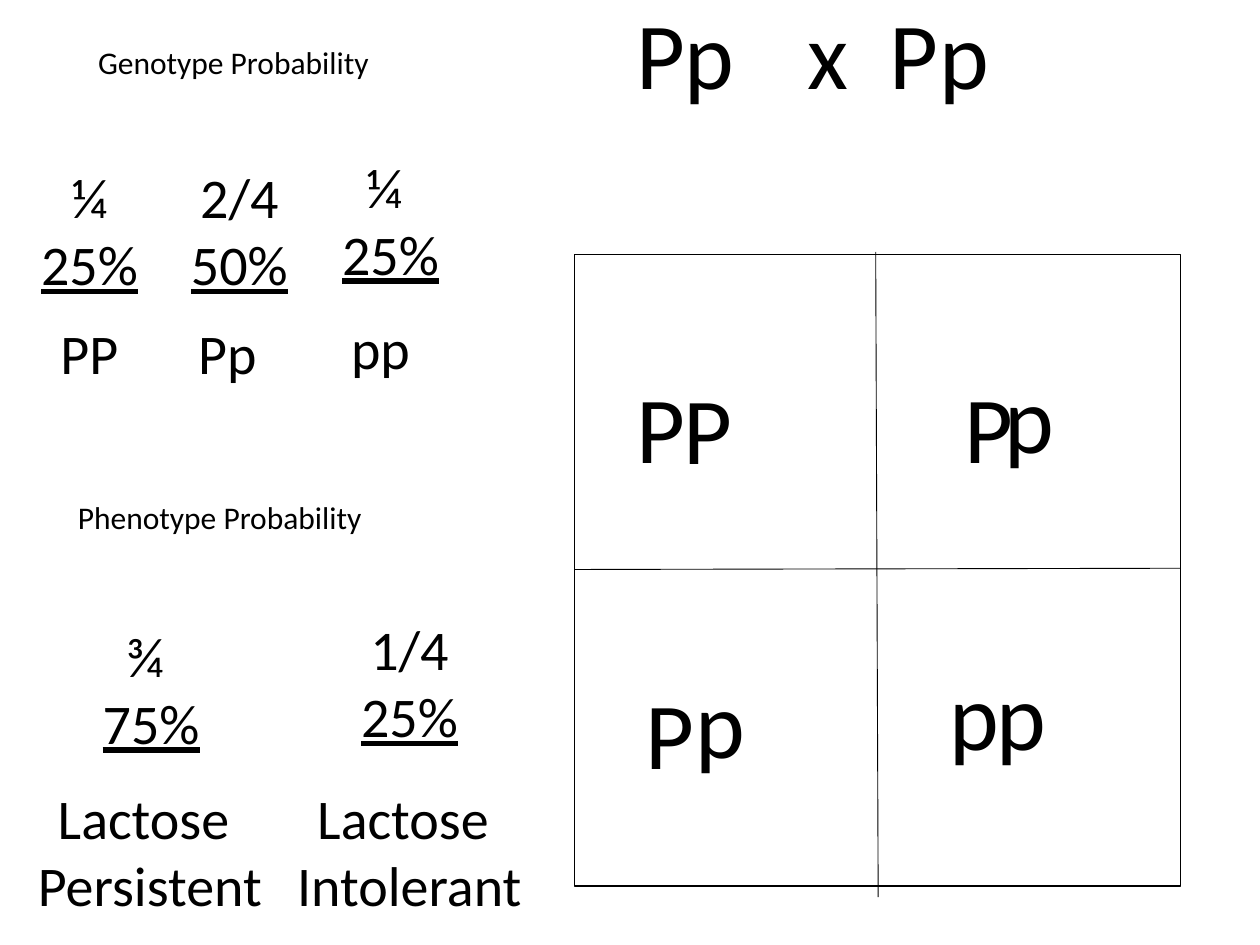
import pptx
import pptx.util
import pptx.dml.color
import pptx.enum.shapes
import pptx.enum.text
import pptx.oxml

Inches = pptx.util.Inches
BLACK = pptx.dml.color.RGBColor(0, 0, 0)
WHITE = pptx.dml.color.RGBColor(255, 255, 255)
ALIGN = pptx.enum.text.PP_ALIGN

SQUARE = (4.56, 2.02, 4.81, 5.01)
LINES = [(6.95, 2, 6.97, 7.12), (4.56, 4.52, 9.37, 4.51)]
WIDTHS = {"P": 0.59, "p": 0.6, "x": 0.53}
ALLELES = [
    ("P", 4.95, -0.09), ("p", 5.33, -0.09), ("x", 6.31, -0.09),
    ("P", 6.96, -0.09), ("p", 7.35, -0.09),
    ("P", 4.95, 2.88), ("P", 5.32, 2.89),
    ("P", 7.55, 2.88), ("p", 7.87, 2.8),
    ("P", 5.02, 5.31), ("p", 5.42, 5.22),
    ("p", 7.43, 5.16), ("p", 7.81, 5.16),
]
HEADS = [("Genotype Probability", 0.68, 0.29), ("Phenotype Probability", 0.52, 3.9)]
TYPES = [("PP", 0.38, 2.48, 0.66), ("Pp", 1.47, 2.48, 0.67), ("pp", 2.68, 2.44, 0.68)]
ODDS = [
    ("¼", "25%", 0.22, 1.24), ("2/4", "50%", 1.41, 1.24), ("¼ ", "25%", 2.61, 1.16),
    ("¾ ", "75%", 0.71, 4.88), ("1/4", "25%", 2.76, 4.83),
]
TRAITS = [("Lactose", " Persistent", 0.09, 2.1), ("Lactose ", "Intolerant", 2.25, 2)]


def style(item, **values):
    for name, value in values.items():
        setattr(item, name, value)


def write(slide, rows, left, top, width, height, size, align=ALIGN.CENTER, wrap=False):
    box = slide.shapes.add_textbox(*map(Inches, (left, top, width, height)))
    frame = box.text_frame
    frame.text = "\n".join(rows)
    style(frame, word_wrap=wrap, auto_size=pptx.enum.text.MSO_AUTO_SIZE.SHAPE_TO_FIT_TEXT)
    for para in frame.paragraphs:
        para.alignment = align
        for run in para.runs:
            style(run.font, name="Calibri", size=pptx.util.Pt(size),
                  underline=True if "%" in run.text else None)
            run.font.color.rgb = BLACK


def draw(line, width):
    line.color.rgb = BLACK
    line.width = pptx.util.Pt(width)


def punnett(slide):
    group = slide.shapes.add_group_shape()
    kind = pptx.enum.shapes.MSO_SHAPE.RECTANGLE
    square = group.shapes.add_shape(kind, *map(Inches, SQUARE))
    square.shadow.inherit = False
    square.fill.solid()
    square.fill.fore_color.rgb = WHITE
    draw(square.line, 1)
    straight = pptx.enum.shapes.MSO_CONNECTOR.STRAIGHT
    for ends in LINES:
        rule = group.shapes.add_connector(straight, *map(Inches, ends))
        draw(rule.line, 0.5)
        rule._element.spPr.append(pptx.oxml.parse_xml(
            '<a:effectLst xmlns:a="http://schemas.openxmlformats.org/drawingml/2006/main"/>'))


def main():
    deck = pptx.Presentation()
    style(deck, slide_width=Inches(10), slide_height=Inches(7.5))
    slide = deck.slides.add_slide(deck.slide_layouts[6])
    punnett(slide)
    for text, left, top in ALLELES:
        write(slide, [text], left, top, WIDTHS[text], 1.01, 54)
    for text, left, top in HEADS:
        write(slide, [text], left, top, 2.73, 0.4, 18, ALIGN.LEFT, True)
    for text, left, top, width in TYPES:
        write(slide, [text], left, top, width, 0.64, 32)
    for *rows, left, top in ODDS:
        write(slide, rows, left, top, 0.98, 1.18, 32)
    for *rows, left, width in TRAITS:
        write(slide, rows, left, 6.17, width, 1.18, 32)
    deck.save("out.pptx")


if __name__ == "__main__":
    main()
